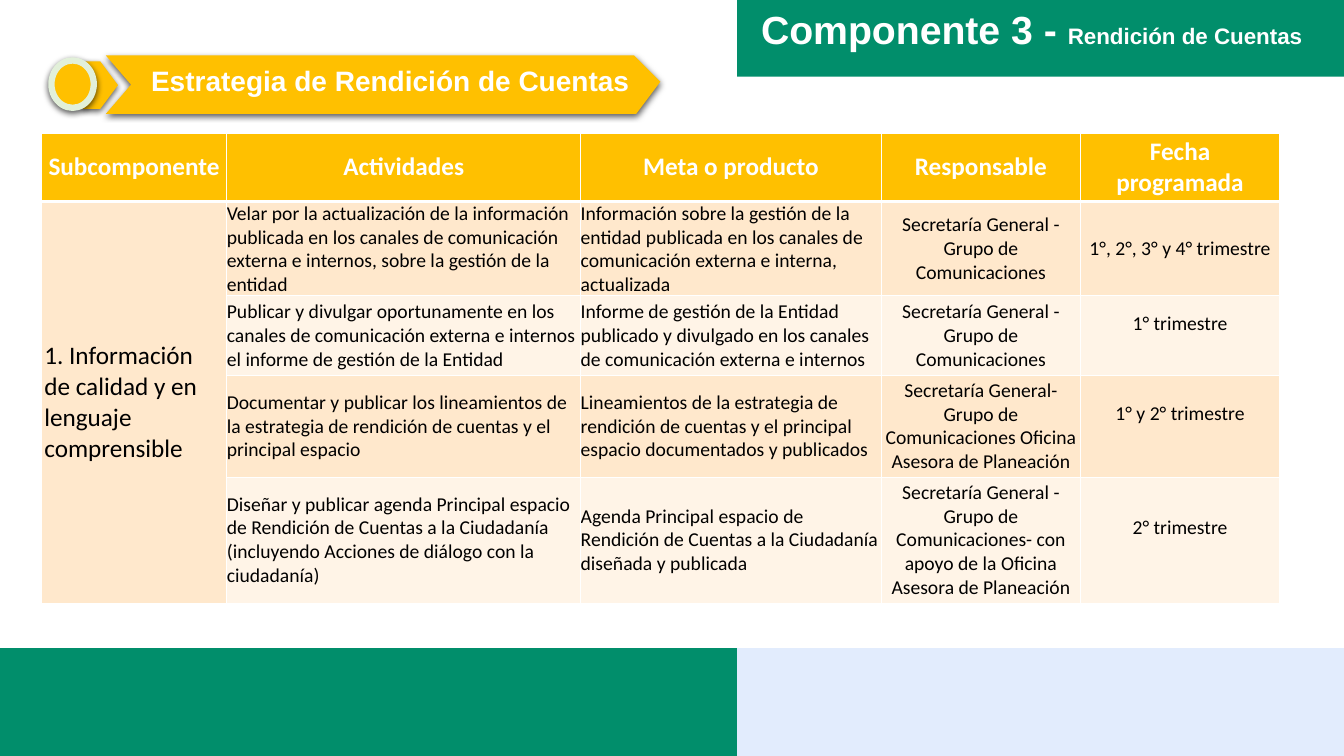
from pptx import Presentation
from pptx.dml.color import RGBColor
from pptx.enum.shapes import MSO_SHAPE as Preset
from pptx.enum.text import MSO_ANCHOR as Anchor, PP_ALIGN as Align
from pptx.oxml import parse_xml
from pptx.oxml.ns import nsdecls
from pptx.util import Pt

WHITE = RGBColor(0xFF, 0xFF, 0xFF)
BLACK = RGBColor(0, 0, 0)
GREEN = RGBColor(0x01, 0x8E, 0x6B)
PALE_BLUE = RGBColor(0xE2, 0xEC, 0xFD)
PALE_GREEN = RGBColor(0xE2, 0xF0, 0xD9)
AMBER = RGBColor(0xFF, 0xC0, 0x00)
BANDS = (RGBColor(0xFF, 0xE8, 0xCC), RGBColor(0xFF, 0xF4, 0xE7))

HEADINGS = ("Subcomponente", "Actividades", "Meta o producto", "Responsable", "Fecha programada")
SUBCOMPONENT = "1. Información de calidad y en lenguaje comprensible"
ACTIVITIES = (
    ("Velar por la actualización de la información publicada en los canales de comunicación "
     "externa e internos, sobre la gestión de la entidad",
     "Información sobre la gestión de la entidad publicada en los canales de comunicación "
     "externa e interna, actualizada",
     "Secretaría General - Grupo de Comunicaciones",
     "1°, 2°, 3° y 4° trimestre"),
    ("Publicar y divulgar oportunamente en los canales de comunicación externa e internos "
     "el informe de gestión de la Entidad",
     "Informe de gestión de la Entidad publicado y divulgado en los canales de comunicación "
     "externa e internos",
     "Secretaría General - Grupo de Comunicaciones",
     "1° trimestre"),
    ("Documentar y publicar los lineamientos de la estrategia de rendición de cuentas y el "
     "principal espacio",
     "Lineamientos de la estrategia de rendición de cuentas y el principal espacio "
     "documentados y publicados",
     "Secretaría General- Grupo de Comunicaciones Oficina Asesora de Planeación",
     "1° y 2° trimestre"),
    ("Diseñar y publicar agenda Principal espacio de Rendición de Cuentas a la Ciudadanía "
     "(incluyendo Acciones de diálogo con la ciudadanía)",
     "Agenda Principal espacio de Rendición de Cuentas a la Ciudadanía diseñada y publicada",
     "Secretaría General - Grupo de Comunicaciones- con apoyo de la Oficina Asesora de Planeación",
     "2° trimestre"),
)
COLUMN_WIDTHS = (184, 351, 298, 198, 197)
ROW_HEIGHTS = (68, 93, 79, 101, 125)
CELL_PAD = 3
DATE_LIFT = 24


class SlideBuilder:
    """Draws styled elements on one slide, measured in px of a hundredth of an inch."""

    SCALE = 9144
    TITLE_FONT = "Arial"
    TABLE_FONT = "Calibri"

    def __init__(self, width, height):
        self.deck = Presentation()
        self.deck.slide_width = self.px(width)
        self.deck.slide_height = self.px(height)
        self.slide = self.deck.slides.add_slide(self.deck.slide_layouts[6])

    def px(self, length):
        return length * self.SCALE

    def paint(self, shape, fill, outline=None, raised=False):
        shape.fill.solid()
        shape.fill.fore_color.rgb = fill
        if outline:
            shape.line.color.rgb = outline
            shape.line.width = Pt(4.5)
        else:
            shape.line.fill.background()
        shape.shadow.inherit = False
        if raised:
            effects = shape._element.spPr.find("{*}effectLst")
            effects.append(parse_xml(
                f'<a:outerShdw {nsdecls("a")} blurRad="{Pt(4.5)}" dist="{Pt(1.5)}" dir="5400000" '
                'rotWithShape="0"><a:srgbClr val="000000"><a:alpha val="63000"/></a:srgbClr></a:outerShdw>'))

    def preset(self, kind, box, fill, **look):
        shape = self.slide.shapes.add_shape(kind, *map(self.px, box))
        self.paint(shape, fill, **look)

    def outline(self, points, fill, **look):
        builder = self.slide.shapes.build_freeform(*points[0], scale=self.SCALE)
        builder.add_line_segments(points[1:], close=True)
        self.paint(builder.convert_to_shape(), fill, **look)

    def styled_run(self, paragraph, text, size, font, color, bold=False):
        run = paragraph.add_run()
        run.text = text
        run.font.size = Pt(size)
        run.font.name = font
        run.font.bold = bold
        run.font.color.rgb = color

    def title(self, box, *parts):
        frame = self.slide.shapes.add_textbox(*map(self.px, box)).text_frame
        frame.word_wrap = True
        for text, size in parts:
            self.styled_run(frame.paragraphs[0], text, size, self.TITLE_FONT, WHITE, bold=True)

    def table(self, left, top, widths, heights):
        box = map(self.px, (left, top, sum(widths), sum(heights)))
        table = self.slide.shapes.add_table(len(heights), len(widths), *box).table
        table.first_row = table.horz_banding = False
        for column, width in zip(table.columns, widths):
            column.width = self.px(width)
        for row, height in zip(table.rows, heights):
            row.height = self.px(height)
        return table

    def cell(self, cell, text, fill, size=14, color=BLACK, bold=False,
             align=Align.CENTER, pad=CELL_PAD, lift=0, top_rule=1, bottom_rule=1):
        cell.fill.solid()
        cell.fill.fore_color.rgb = fill
        cell.vertical_anchor = Anchor.MIDDLE
        cell.margin_left = cell.margin_right = cell.margin_top = self.px(pad)
        cell.margin_bottom = self.px(pad + lift)
        rules = {"lnL": 1, "lnR": 1, "lnT": top_rule, "lnB": bottom_rule}
        for place, (edge, weight) in enumerate(rules.items()):
            cell._tc.tcPr.insert(place, parse_xml(
                f'<a:{edge} {nsdecls("a")} w="{Pt(weight)}"><a:solidFill>'
                f'<a:srgbClr val="{WHITE}"/></a:solidFill></a:{edge}>'))
        paragraph = cell.text_frame.paragraphs[0]
        paragraph.alignment = align
        if text:
            self.styled_run(paragraph, text, size, self.TABLE_FONT, color, bold)


def main():
    page = SlideBuilder(1333, 750)
    page.preset(Preset.RECTANGLE, (731, -1, 602, 77), GREEN)
    page.preset(Preset.RECTANGLE, (-2, 643, 733, 107), GREEN)
    page.preset(Preset.RECTANGLE, (731, 643, 602, 107), PALE_BLUE)
    page.title((745, 0, 576, 57), ("Componente 3 - ", 28), ("Rendición de Cuentas", 16))

    ribbon = ((105, 55), (629, 55), (655, 81), (631, 113), (105, 113), (130, 84))
    page.outline(ribbon, AMBER, raised=True)
    page.preset(Preset.PENTAGON, (82, 61, 35, 47), AMBER, raised=True)
    page.preset(Preset.OVAL, (51, 60, 42, 47), AMBER, outline=PALE_GREEN, raised=True)
    page.title((140, 58, 574, 44), ("Estrategia de Rendición de Cuentas", 20))

    plan = page.table(41, 132, COLUMN_WIDTHS, ROW_HEIGHTS)
    for column, heading in enumerate(HEADINGS):
        page.cell(plan.cell(0, column), heading, AMBER, size=18, color=WHITE, bold=True, bottom_rule=3)
    for row, (activity, goal, owner, date) in enumerate(ACTIVITIES, 1):
        band = BANDS[(row - 1) % 2]
        top_rule = 3 if row == 1 else 1
        page.cell(plan.cell(row, 0), SUBCOMPONENT if row == 1 else "", BANDS[0], size=18,
                  align=Align.LEFT, top_rule=top_rule)
        for column, text in enumerate((activity, goal), 1):
            page.cell(plan.cell(row, column), text, band, align=Align.LEFT, pad=0, top_rule=top_rule)
        page.cell(plan.cell(row, 3), owner, band, top_rule=top_rule)
        page.cell(plan.cell(row, 4), date, band, lift=DATE_LIFT if row > 1 else 0, top_rule=top_rule)
    plan.cell(1, 0).merge(plan.cell(len(ACTIVITIES), 0))

    page.deck.save("out.pptx")


if __name__ == "__main__":
    main()
